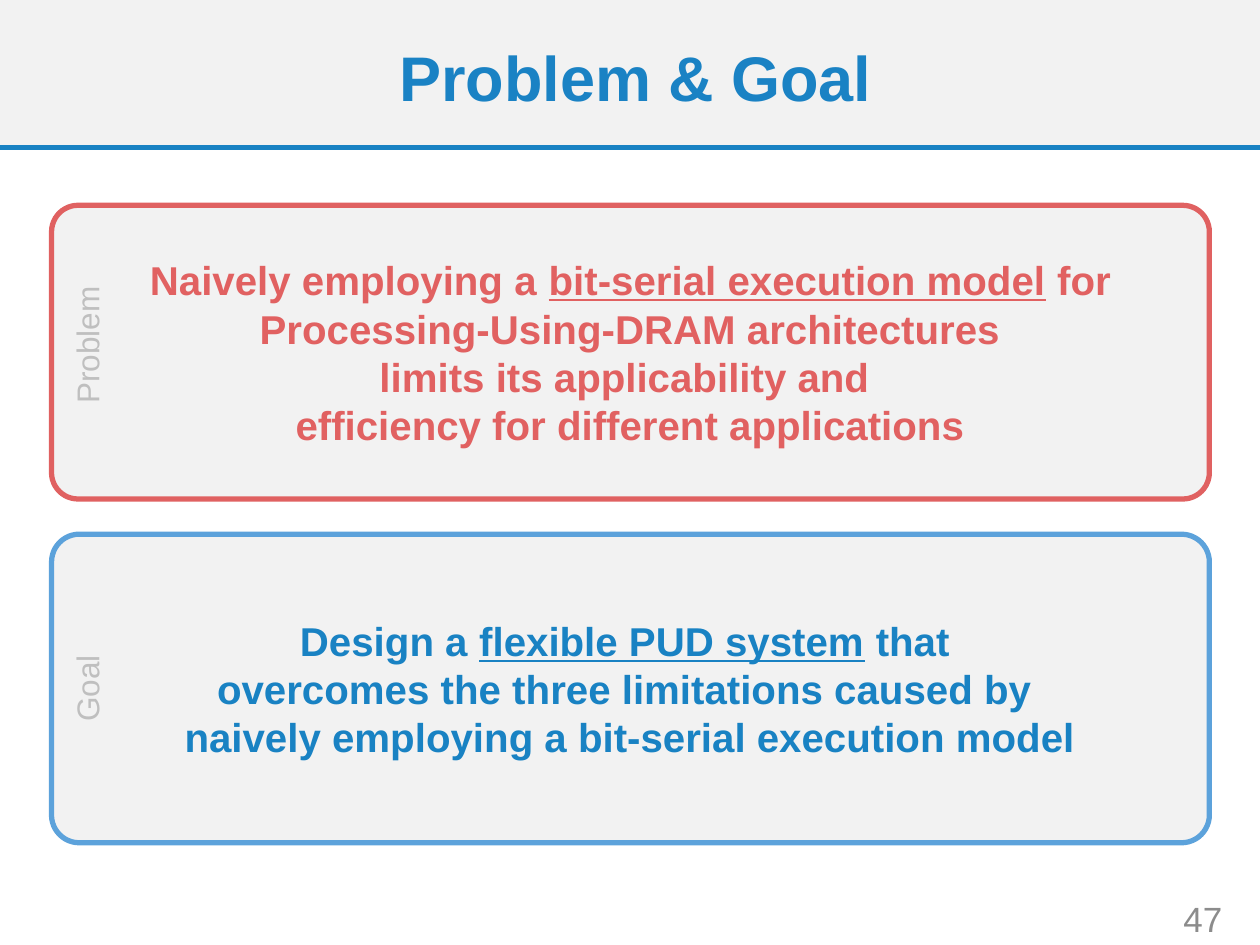
from dataclasses import dataclass

from lxml import etree
from pptx import Presentation
from pptx.dml.color import RGBColor
from pptx.enum.shapes import MSO_CONNECTOR, MSO_SHAPE
from pptx.enum.text import MSO_ANCHOR, PP_ALIGN
from pptx.oxml.ns import qn
from pptx.util import Cm, Pt

RECTANGLE = MSO_SHAPE.RECTANGLE
ROUNDED = MSO_SHAPE.ROUNDED_RECTANGLE
STRAIGHT = MSO_CONNECTOR.STRAIGHT
MIDDLE = MSO_ANCHOR.MIDDLE
CENTER, RIGHT = PP_ALIGN.CENTER, PP_ALIGN.RIGHT
SLIDE_WIDTH, SLIDE_HEIGHT = 25.4, 19.05


@dataclass(frozen=True)
class Theme:
    font: str = "Arial"
    band: str = "F2F2F2"
    blue: str = "1982C3"
    title: str = "1A82C4"
    red: str = "E16161"
    red_line: str = "E06161"
    blue_line: str = "5CA2DB"
    label: str = "BFBFBF"
    number: str = "8C8C8C"
    title_size: int = 36
    body_size: int = 23
    label_size: int = 18
    number_size: int = 20
    line_width: int = 3


THEME = Theme()

PROBLEM_LINES = [
    [("Naively employing a ", False), ("bit-serial execution model", True),
     (" for Processing-Using-DRAM architectures", False)],
    [("limits its applicability and ", False)],
    [("efficiency for different applications", False)],
]
GOAL_LINES = [
    [("Design a ", False), ("flexible PUD system", True), (" that ", False)],
    [("overcomes the three limitations caused by ", False)],
    [("naively employing a bit-serial execution model", False)],
]


def write_lines(shape, lines, size, color, bold=False, align=CENTER):
    """Fill one paragraph; each line is a list of (text, underlined) runs."""
    frame = shape.text_frame
    frame.word_wrap = True
    frame.vertical_anchor = MIDDLE
    paragraph = frame.paragraphs[0]
    paragraph.alignment = align
    style = {"name": THEME.font, "size": Pt(size), "bold": bold}
    for index, line in enumerate(lines):
        if index:
            paragraph.add_line_break()
        for text, underlined in line:
            run = paragraph.add_run()
            run.text = text
            for attribute, value in style.items():
                setattr(run.font, attribute, value)
            run.font.color.rgb = RGBColor.from_string(color)
            if underlined:
                run.font.underline = True
    return paragraph


def add_text(slide, box, text, size, color, **options):
    shape = slide.shapes.add_textbox(*map(Cm, box))
    paragraph = write_lines(shape, [[(text, False)]], size, color, **options)
    return shape, paragraph


def add_filled_shape(slide, kind, box):
    shape = slide.shapes.add_shape(kind, *map(Cm, box))
    shape.shadow.inherit = False
    shape.fill.solid()
    shape.fill.fore_color.rgb = RGBColor.from_string(THEME.band)
    return shape


def set_line(shape, color):
    shape.line.color.rgb = RGBColor.from_string(color)
    shape.line.width = Pt(THEME.line_width)


def add_header(slide, box, title):
    left, top, width, height = box
    add_filled_shape(slide, RECTANGLE, box).line.fill.background()
    bottom = Cm(top + height)
    rule = slide.shapes.add_connector(
        STRAIGHT, Cm(left), bottom, Cm(left + width), bottom)
    set_line(rule, THEME.blue)
    etree.SubElement(rule.line._get_or_add_ln().getparent(), qn("a:effectLst"))
    title_box = (left + 0.46, top + 0.36, width - 0.69, height - 0.41)
    _, paragraph = add_text(
        slide, title_box, title, THEME.title_size, THEME.title, bold=True)
    paragraph.line_spacing = 0.9


def add_panel(slide, box, label, label_length, lines, color, line_color):
    """Rounded statement panel with a label turned along its left edge."""
    left, top, _, _ = box
    panel = add_filled_shape(slide, ROUNDED, box)
    panel.adjustments[0] = 0.09
    set_line(panel, line_color)
    write_lines(panel, lines, THEME.body_size, color, bold=True)

    thickness = 1.02
    center_x, center_y = left + 0.71, top + label_length / 2
    label_box = (center_x - label_length / 2, center_y - thickness / 2,
                 label_length, thickness)
    label_shape, _ = add_text(
        slide, label_box, label, THEME.label_size, THEME.label)
    label_shape.rotation = 270


def add_page_number(slide, box, number):
    add_text(slide, box, number, THEME.number_size, THEME.number, align=RIGHT)


def main():
    presentation = Presentation()
    presentation.slide_width = Cm(SLIDE_WIDTH)
    presentation.slide_height = Cm(SLIDE_HEIGHT)
    slide = presentation.slides.add_slide(presentation.slide_layouts[6])

    add_header(slide, (0, 0, SLIDE_WIDTH, 2.97), "Problem & Goal")
    add_page_number(slide, (22.15, 18.01, 2.74, 1.02), "47")
    add_panel(slide, (1.04, 4.14, 23.34, 5.92), "Problem", 5.64,
              PROBLEM_LINES, THEME.red, THEME.red_line)
    add_panel(slide, (1.04, 10.77, 23.34, 6.22), "Goal", 6.22,
              GOAL_LINES, THEME.blue, THEME.blue_line)
    presentation.save("out.pptx")


if __name__ == "__main__":
    main()
